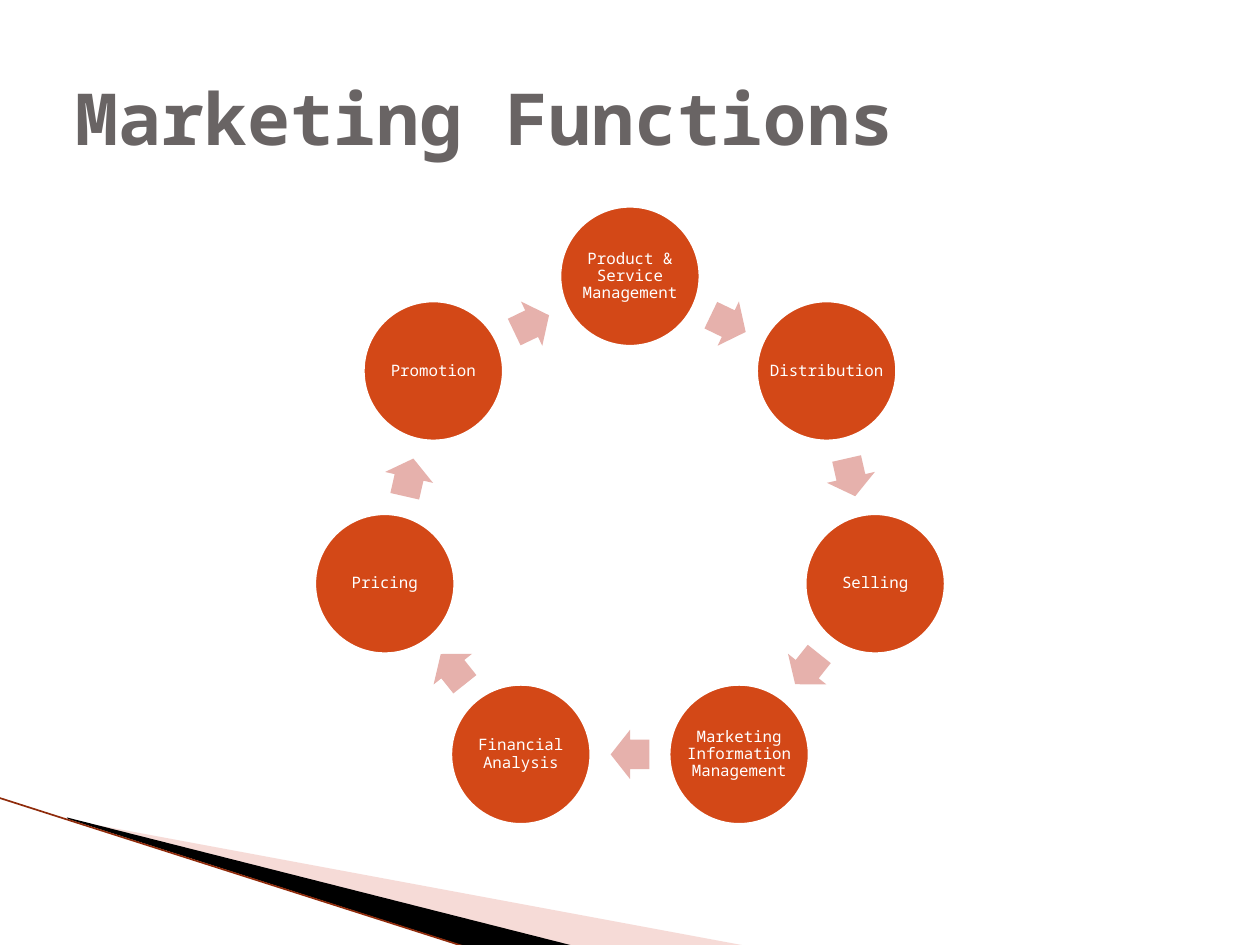
import math

from lxml import etree
from pptx import Presentation
from pptx import util as u
from pptx.dml.color import RGBColor
from pptx.enum import shapes, text
from pptx.oxml import ns


def colour(value):
    return RGBColor.from_string(value)


class SlideBuilder:
    """Draws styled elements on the current slide, with lengths in centimetres."""

    font = "Noto Sans Mono"
    accent = "D34817"
    arrow_fill = "E6B1AC"
    title_colour = "696464"
    white = "FFFFFF"

    def __init__(self, slide):
        self.slide = slide

    def paint(self, shape, fill, outline=None, width=0):
        shape.shadow.inherit = False
        shape.fill.solid()
        shape.fill.fore_color.rgb = colour(fill)
        if outline:
            shape.line.color.rgb = colour(outline)
            shape.line.width = u.Pt(width)
        else:
            shape.line.fill.background()

    def preset(self, kind, centre, size, fill, outline=None, width=0):
        x, y = centre
        wide, high = size
        shape = self.slide.shapes.add_shape(
            kind, u.Cm(x - wide / 2), u.Cm(y - high / 2), u.Cm(wide), u.Cm(high))
        self.paint(shape, fill, outline, width)
        return shape

    def arrow(self, centre, angle):
        shape = self.preset(shapes.MSO_SHAPE.RIGHT_ARROW, centre, (0.78, 0.99), self.arrow_fill)
        shape.adjustments[0] = 0.6
        shape.adjustments[1] = 0.5
        shape.rotation = angle

    def text(self, words, box, size, ink, bold=False, align=None, inset=0.25, spacing=None):
        shape = self.slide.shapes.add_textbox(*(u.Cm(length) for length in box))
        frame = shape.text_frame
        frame.word_wrap = True
        frame.vertical_anchor = text.MSO_ANCHOR.MIDDLE
        frame.margin_left = frame.margin_right = u.Cm(inset)
        frame.margin_top = frame.margin_bottom = u.Cm(min(inset, 0.13))
        paragraph = frame.paragraphs[0]
        paragraph.alignment = align
        paragraph.line_spacing = spacing
        run = paragraph.add_run()
        run.text = words
        run.font.name = self.font
        run.font.size = u.Pt(size)
        run.font.bold = bold
        run.font.color.rgb = colour(ink)

    def node(self, label, centre, diameter=2.92):
        x, y = centre
        self.preset(shapes.MSO_SHAPE.OVAL, centre, (diameter, diameter),
                    self.accent, self.white, 4.33)
        box = (x - diameter / 2, y - diameter / 2, diameter, diameter)
        self.text(label, box, 9, self.white, align=text.PP_ALIGN.CENTER, inset=0.03, spacing=0.9)

    def wedge(self, points, fill, opacity=100):
        start, *others = [(u.Cm(x), u.Cm(y)) for x, y in points]
        builder = self.slide.shapes.build_freeform(*start)
        builder.add_line_segments(others)
        shape = builder.convert_to_shape()
        self.paint(shape, fill)
        if opacity < 100:
            tint = shape.fill._xPr.find(".//" + ns.qn("a:srgbClr"))
            etree.SubElement(tint, ns.qn("a:alpha"), val=str(opacity * 1000))

    def line(self, start, end, ink, width):
        connector = self.slide.shapes.add_connector(
            shapes.MSO_CONNECTOR.STRAIGHT, *(u.Cm(length) for length in start + end))
        connector.line.color.rgb = colour(ink)
        connector.line.width = u.Pt(width)
        etree.SubElement(connector._element.spPr, ns.qn("a:effectLst"))

    def cycle(self, labels, centre, radius):
        step = 360 / len(labels)
        middle = radius * math.cos(math.radians(step / 2))

        def place(angle, distance):
            turn = math.radians(angle)
            return (centre[0] + distance * math.sin(turn),
                    centre[1] - distance * math.cos(turn))

        for index, label in enumerate(labels):
            angle = index * step
            self.node(label, place(angle, radius))
            self.arrow(place(angle + step / 2, middle), angle + step / 2)


def main():
    presentation = Presentation()
    presentation.slide_width = u.Cm(25.4)
    presentation.slide_height = u.Cm(19.05)
    builder = SlideBuilder(presentation.slides.add_slide(presentation.slide_layouts[6]))

    builder.wedge([(1.4, 16.53), (15.11, 19.08), (11.58, 19.08), (1.4, 16.51)], "E9A59D", 40)
    builder.wedge([(1.35, 16.48), (11.61, 19.08), (9.45, 19.1), (1.37, 16.51)], "000000")
    builder.line((-0.03, 16.08), (9.42, 19.1), "8F2B0B", 0.95)

    functions = ["Product & Service Management", "Distribution", "Selling",
                 "Marketing Information Management", "Financial Analysis",
                 "Pricing", "Promotion"]
    builder.cycle(functions, (12.7, 10.64), 5.07)
    builder.text("Marketing Functions", (1.27, 0.76, 22.86, 3.18), 41,
                 builder.title_colour, bold=True)
    presentation.save("out.pptx")


if __name__ == "__main__":
    main()
